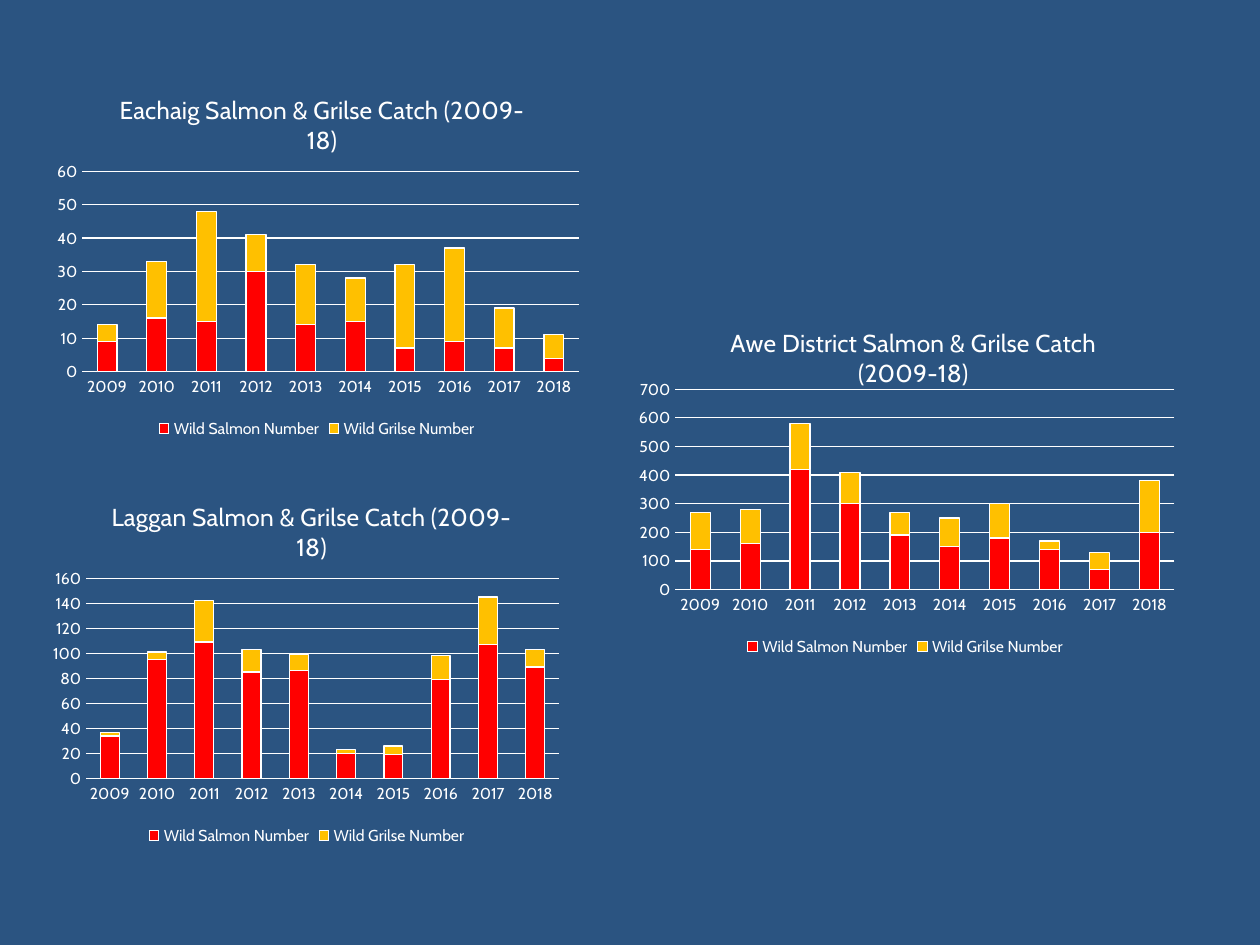
from dataclasses import dataclass

from lxml import etree
from pptx import Presentation
from pptx.chart.data import CategoryChartData
from pptx.dml.color import RGBColor as RGB
from pptx.enum.chart import XL_CHART_TYPE as ChartType
from pptx.enum.chart import XL_LEGEND_POSITION as LegendPos
from pptx.enum.chart import XL_TICK_MARK as Tick
from pptx.oxml.ns import qn
from pptx.util import Inches, Pt


@dataclass(frozen=True)
class Theme:
    font: str = "Cabin"
    background: RGB = RGB(0x2B, 0x54, 0x81)
    ink: RGB = RGB(0xFF, 0xFF, 0xFF)
    series: tuple = (RGB(0xFF, 0x00, 0x00), RGB(0xFF, 0xC0, 0x00))
    title_size: Pt = Pt(14)
    base_size: Pt = Pt(10)
    label_size: Pt = Pt(9)
    line_width: Pt = Pt(0.75)


YEARS = [str(year) for year in range(2009, 2019)]
SERIES_NAMES = ("Wild Salmon Number", "Wild Grilse Number")
CHART_HEIGHT = 3
PLOT_Y, PLOT_H = 0.28, 0.53

# Sizes are inches; title and plot positions are fractions of the chart
CATCHES = [
    dict(river="Eachaig", left=0.35, top=0.52, width=4.33,
         title_at=(0.13, 0.06), plot_x=0.07, plot_w=0.91, maximum=60, step=10,
         values=([9, 16, 15, 30, 14, 15, 7, 9, 7, 4],
                 [5, 17, 33, 11, 18, 13, 25, 28, 12, 7])),
    dict(river="Laggan", left=0.35, top=3.75, width=4.17,
         title_at=(0.12, 0.06), plot_x=0.08, plot_w=0.9, maximum=160, step=20,
         values=([34, 95, 109, 85, 86, 20, 19, 79, 107, 89],
                 [3, 6, 33, 18, 13, 3, 7, 19, 38, 14])),
    dict(river="Awe District", left=4.96, top=2.25, width=4.45,
         title_at=(0.18, 0.1), plot_x=0.09, plot_w=0.89, maximum=700, step=100,
         values=([140, 160, 420, 300, 190, 150, 180, 140, 70, 200],
                 [130, 120, 160, 110, 80, 100, 120, 30, 60, 180])),
]


def set_layout(parent, index, **settings):
    """Give a chart part a manual layout."""
    for old in parent.findall(qn("c:layout")):
        parent.remove(old)
    layout = etree.Element(qn("c:layout"))
    manual = etree.SubElement(layout, qn("c:manualLayout"))
    for tag, value in settings.items():
        etree.SubElement(manual, qn(f"c:{tag}")).set("val", str(value))
    parent.insert(index, layout)


class SlideBuilder:
    def __init__(self, slide, theme):
        self.slide, self.theme = slide, theme

    def background(self):
        fill = self.slide.background.fill
        fill.solid()
        fill.fore_color.rgb = self.theme.background

    def style_font(self, font, size):
        font.name, font.size = self.theme.font, size
        font.bold = False
        font.color.rgb = self.theme.ink

    def style_line(self, line):
        line.color.rgb = self.theme.ink
        line.width = self.theme.line_width

    def title(self, chart, text, at):
        chart.has_title = True
        title = chart.chart_title
        r = title.text_frame.paragraphs[0].add_run()
        r.text = text
        self.style_font(r.font, self.theme.title_size)
        title.include_in_layout = False
        set_layout(title.element, 1, xMode="edge", yMode="edge", x=at[0], y=at[1])

    def axes(self, chart, maximum, step):
        cat, val = chart.category_axis, chart.value_axis
        for axis in (cat, val):
            axis.major_tick_mark = axis.minor_tick_mark = Tick.NONE
            self.style_font(axis.tick_labels.font, self.theme.label_size)
        self.style_line(cat.format.line)
        val.format.line.fill.background()
        val.has_major_gridlines = True
        self.style_line(val.major_gridlines.format.line)
        val.minimum_scale, val.maximum_scale, val.major_unit = 0, maximum, step

    def legend(self, chart):
        chart.has_legend = True
        chart.legend.position = LegendPos.BOTTOM
        chart.legend.include_in_layout = False
        self.style_font(chart.legend.font, self.theme.label_size)

    def catch_chart(self, river, left, top, width, title_at, plot_x, plot_w,
                    maximum, step, values):
        data = CategoryChartData()
        data.categories = YEARS
        for name, numbers in zip(SERIES_NAMES, values):
            data.add_series(name, numbers)
        chart = self.slide.shapes.add_chart(
            ChartType.COLUMN_STACKED, Inches(left), Inches(top),
            Inches(width), Inches(CHART_HEIGHT), data).chart
        self.style_font(chart.font, self.theme.base_size)
        self.title(chart, f"{river} Salmon & Grilse Catch (2009-18)", title_at)
        self.axes(chart, maximum, step)
        self.legend(chart)

        # Stacked columns
        plot = chart.plots[0]
        plot.gap_width, plot.overlap = 150, 100
        plot.vary_by_categories = False
        for series, color in zip(plot.series, self.theme.series):
            series.format.fill.solid()
            series.format.fill.fore_color.rgb = color
            self.style_line(series.format.line)

        plot_area = chart.element.find(f".//{qn('c:plotArea')}")
        set_layout(plot_area, 0, layoutTarget="inner", xMode="edge", yMode="edge",
                   x=plot_x, y=PLOT_Y, w=plot_w, h=PLOT_H)


def main():
    prs = Presentation()
    prs.slide_width, prs.slide_height = Inches(10), Inches(7.5)
    blank = prs.slide_layouts[6]
    builder = SlideBuilder(prs.slides.add_slide(blank), Theme())
    builder.background()
    for catch in CATCHES:
        builder.catch_chart(**catch)
    prs.save("out.pptx")


if __name__ == "__main__":
    main()
